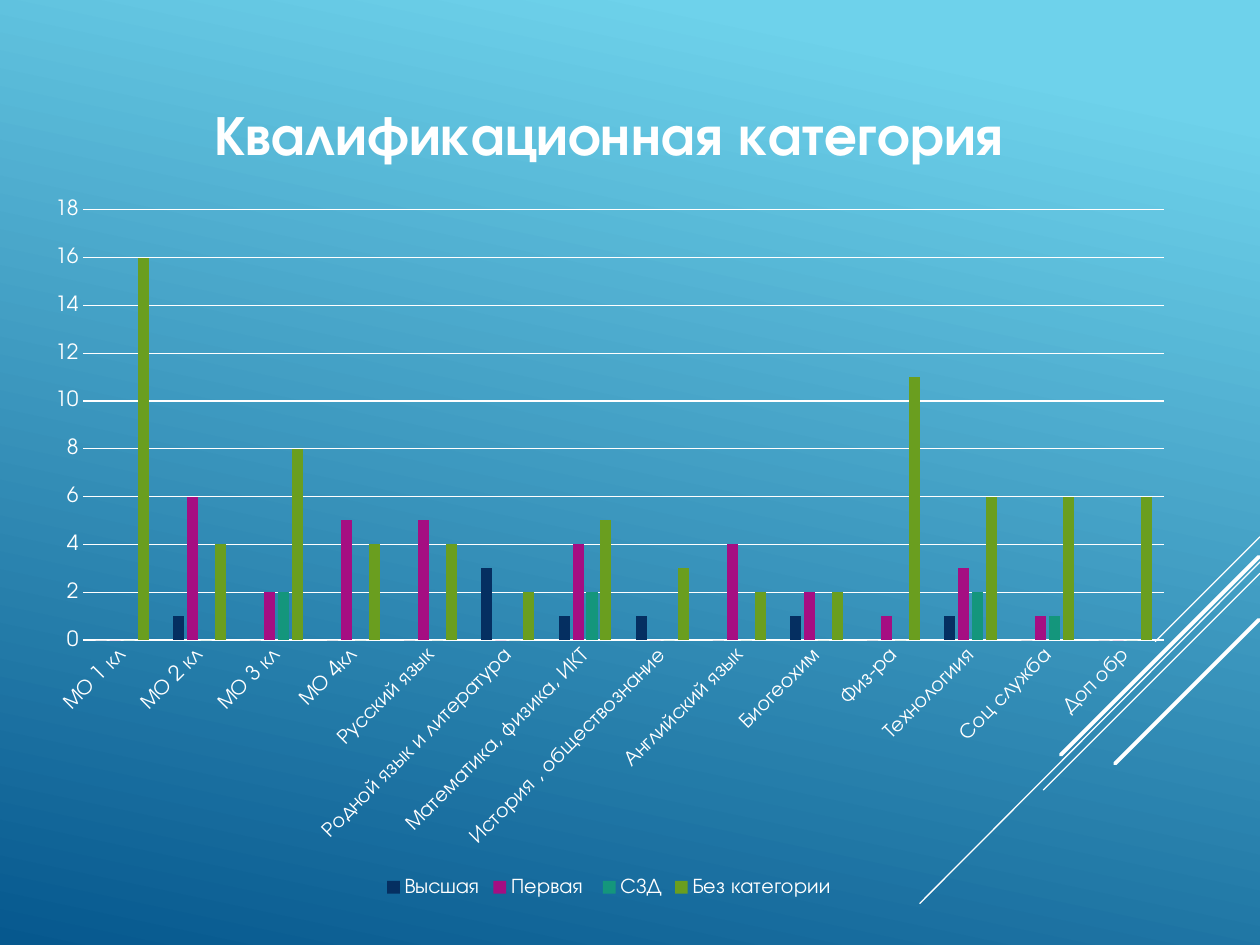
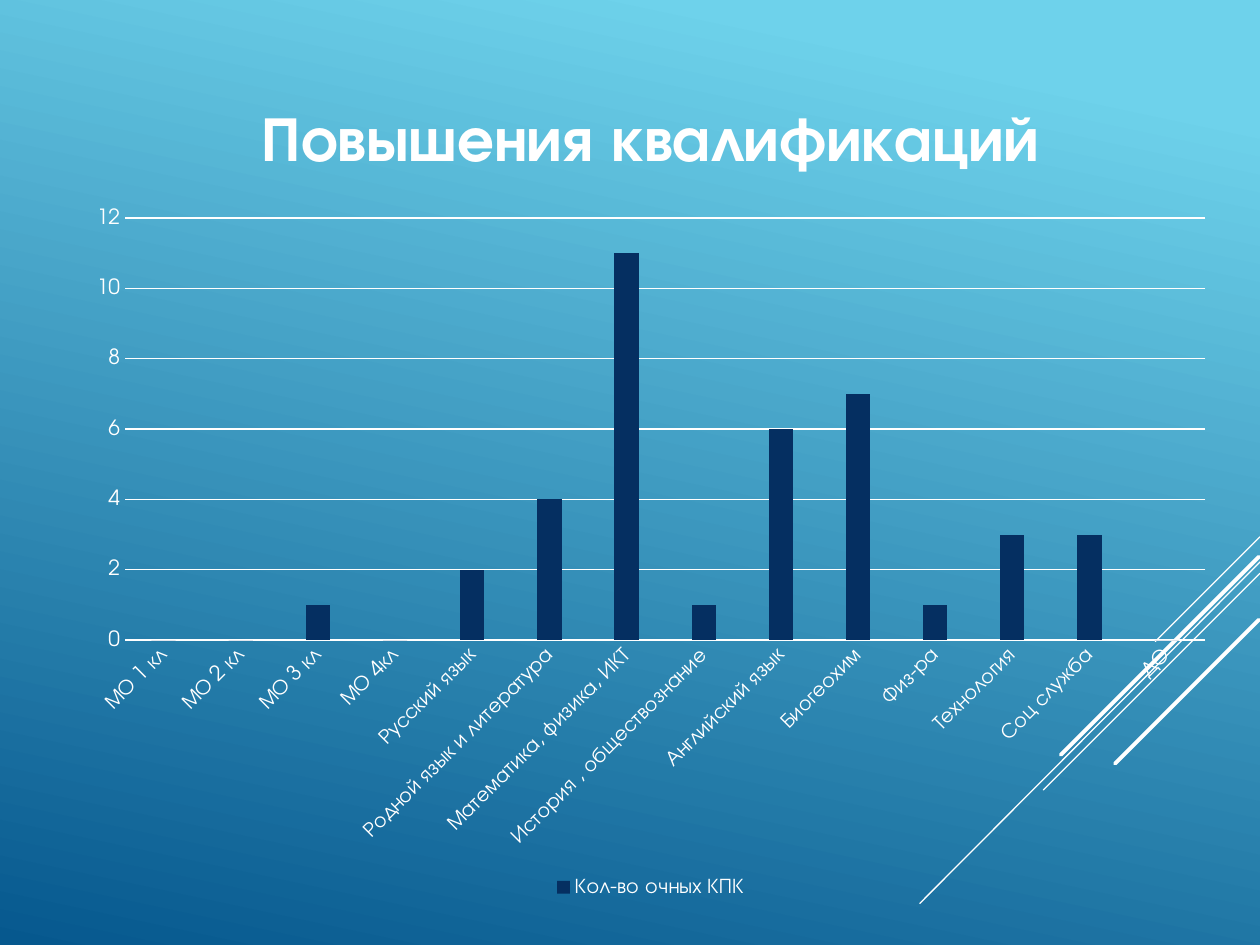
"""Build two slides with column charts on staff qualification."""
from dataclasses import dataclass

from lxml import etree
from pptx import Presentation
from pptx.chart.chart import Chart
from pptx.chart.data import CategoryChartData
from pptx.dml.color import RGBColor
from pptx.enum.chart import XL_CHART_TYPE, XL_LEGEND_POSITION, XL_TICK_MARK
from pptx.enum.shapes import MSO_CONNECTOR
from pptx.oxml.ns import qn
from pptx.slide import Slide
from pptx.util import Inches, Pt

COLUMNS = XL_CHART_TYPE.COLUMN_CLUSTERED
LEGEND_BOTTOM = XL_LEGEND_POSITION.BOTTOM
NO_TICKS = XL_TICK_MARK.NONE
STRAIGHT = MSO_CONNECTOR.STRAIGHT

WHITE = RGBColor(0xFF, 0xFF, 0xFF)
SKY = RGBColor(0x6E, 0xD2, 0xEB)
DEEP_BLUE = RGBColor(0x06, 0x58, 0x8E)
NAVY = RGBColor(0x05, 0x2F, 0x61)
MAGENTA = RGBColor(0xA5, 0x0E, 0x82)
TEAL = RGBColor(0x14, 0x96, 0x7C)
GREEN = RGBColor(0x6A, 0x9E, 0x1F)

FONT = "TeX Gyre Adventor"
GRADIENT_STOPS = ((0.10, SKY), (1.0, DEEP_BLUE))
GRADIENT_ANGLE = 360 - 102
PLOT_LEFT, PLOT_WIDTH, PLOT_BOTTOM = 0.045, 0.935, 0.684
LABEL_ROTATION = -45 * 60000


@dataclass(frozen=True)
class Ray:
    """A diagonal line of the corner decoration, in inches and points."""

    start: tuple[float, float]
    end: tuple[float, float]
    weight: float


@dataclass(frozen=True)
class Series:
    """One named and coloured set of columns."""

    name: str
    values: tuple[int, ...]
    color: RGBColor


@dataclass(frozen=True)
class ChartSlide:
    """A slide that holds one titled column chart."""

    title: str
    title_size: int
    left: float
    plot_top: float
    maximum: int
    categories: tuple[str, ...]
    series: tuple[Series, ...]


RAYS = (
    Ray((10, 4.26), (9.17, 5.09), 0.75),
    Ray((10, 4.46), (7.3, 7.17), 0.75),
    Ray((10, 4.55), (8.28, 6.27), 0.75),
    Ray((9.99, 4.42), (8.42, 5.99), 2.25),
    Ray((9.99, 4.92), (8.85, 6.06), 2.25),
)

SHARED_CATEGORIES = (
    "МО 1 кл", "МО 2 кл", "МО 3 кл", "МО 4кл", "Русский язык",
    "Родной язык и литература", "Математика, физика, ИКТ",
    "История , обществознание", "Английский язык", "Биогеохим", "Физ-ра",
)

CHART_SLIDES = (
    ChartSlide(
        "Квалификационная категория", 32, 0.25, 0.165, 18,
        SHARED_CATEGORIES + ("Технологиия", "Соц служба", "Доп обр"),
        (
            Series("Высшая", (0, 1, 0, 0, 0, 3, 1, 1, 0, 1, 0, 1, 0, 0), NAVY),
            Series("Первая ", (0, 6, 2, 5, 5, 0, 4, 0, 4, 2, 1, 3, 1, 0), MAGENTA),
            Series("СЗД", (0, 0, 2, 0, 0, 0, 2, 0, 0, 0, 0, 2, 1, 0), TEAL),
            Series("Без категории", (16, 4, 8, 4, 4, 2, 5, 3, 2, 2, 11, 6, 6, 6), GREEN),
        ),
    ),
    ChartSlide(
        "Повышения квалификаций", 36, 0.58, 0.175, 12,
        SHARED_CATEGORIES + ("Технология", "Соц служба", "ДО"),
        (Series("Кол-во очных КПК", (0, 0, 1, 0, 2, 4, 11, 1, 6, 7, 1, 3, 3, 0), NAVY),),
    ),
)


def style_font(font, size: float, bold: bool = False) -> None:
    """Apply the shared typeface and colour to a font."""
    font.name = FONT
    font.size = Pt(size)
    font.bold = bold
    font.color.rgb = WHITE


def style_line(line, weight: float = 0.75) -> None:
    """Make a line solid white."""
    line.color.rgb = WHITE
    line.width = Pt(weight)


def paint_background(slide: Slide) -> None:
    """Fill the slide background with the blue gradient."""
    fill = slide.background.fill
    fill.gradient()
    fill.gradient_angle = GRADIENT_ANGLE
    for stop, (position, color) in zip(fill.gradient_stops, GRADIENT_STOPS):
        stop.position = position
        stop.color.rgb = color


def draw_ray(slide: Slide, ray: Ray) -> None:
    """Draw one round-capped diagonal line without a shadow."""
    points = [Inches(value) for value in ray.start + ray.end]
    connector = slide.shapes.add_connector(STRAIGHT, *points)
    style_line(connector.line, ray.weight)
    properties = connector._element.spPr
    properties.find(qn("a:ln")).set("cap", "rnd")
    etree.SubElement(properties, qn("a:effectLst"))


def place_plot(chart: Chart, top: float) -> None:
    """Fix the inner plot area as fractions of the chart."""
    plot_area = chart._chartSpace.chart.plotArea
    for old_layout in plot_area.findall(qn("c:layout")):
        plot_area.remove(old_layout)
    layout = etree.Element(qn("c:layout"))
    manual = etree.SubElement(layout, qn("c:manualLayout"))
    settings = {
        "layoutTarget": "inner", "xMode": "edge", "yMode": "edge",
        "x": PLOT_LEFT, "y": top, "w": PLOT_WIDTH, "h": round(PLOT_BOTTOM - top, 3),
    }
    for name, value in settings.items():
        etree.SubElement(manual, qn(f"c:{name}")).set("val", str(value))
    plot_area.insert(0, layout)


def style_axes(chart: Chart, maximum: int) -> None:
    """Format both axes, the gridlines and the slanted labels."""
    for axis in (chart.category_axis, chart.value_axis):
        axis.major_tick_mark = NO_TICKS
        axis.minor_tick_mark = NO_TICKS
        style_font(axis.tick_labels.font, 12)
    category_axis, value_axis = chart.category_axis, chart.value_axis
    style_line(category_axis.format.line)
    body = category_axis._element.find(qn("c:txPr")).find(qn("a:bodyPr"))
    body.set("rot", str(LABEL_ROTATION))
    body.set("vert", "horz")
    value_axis.minimum_scale = 0
    value_axis.maximum_scale = maximum
    value_axis.major_unit = 2
    value_axis.format.line.fill.background()
    value_axis.has_major_gridlines = True
    style_line(value_axis.major_gridlines.format.line)


def add_column_chart(slide: Slide, content: ChartSlide) -> None:
    """Add the chart with its title, legend, axes and columns."""
    data = CategoryChartData()
    data.categories = content.categories
    for series in content.series:
        data.add_series(series.name, series.values)
    chart = slide.shapes.add_chart(
        COLUMNS, Inches(content.left), Inches(0.58), Inches(9.17), Inches(6.58), data
    ).chart
    style_font(chart.font, 10)

    chart.has_title = True
    run = chart.chart_title.text_frame.paragraphs[0].add_run()
    run.text = content.title
    style_font(run.font, content.title_size, bold=True)

    chart.has_legend = True
    chart.legend.position = LEGEND_BOTTOM
    chart.legend.include_in_layout = False
    style_font(chart.legend.font, 12)

    style_axes(chart, content.maximum)
    place_plot(chart, content.plot_top)
    plot = chart.plots[0]
    plot.gap_width = 219
    plot.overlap = -27
    plot.vary_by_categories = False
    for columns, series in zip(plot.series, content.series):
        columns.format.fill.solid()
        columns.format.fill.fore_color.rgb = series.color


def main() -> None:
    """Build and save the presentation."""
    presentation = Presentation()
    presentation.slide_width = Inches(10)
    presentation.slide_height = Inches(7.5)
    for content in CHART_SLIDES:
        slide = presentation.slides.add_slide(presentation.slide_layouts[6])
        paint_background(slide)
        for ray in RAYS:
            draw_ray(slide, ray)
        add_column_chart(slide, content)
    presentation.save("out.pptx")


if __name__ == "__main__":
    main()
